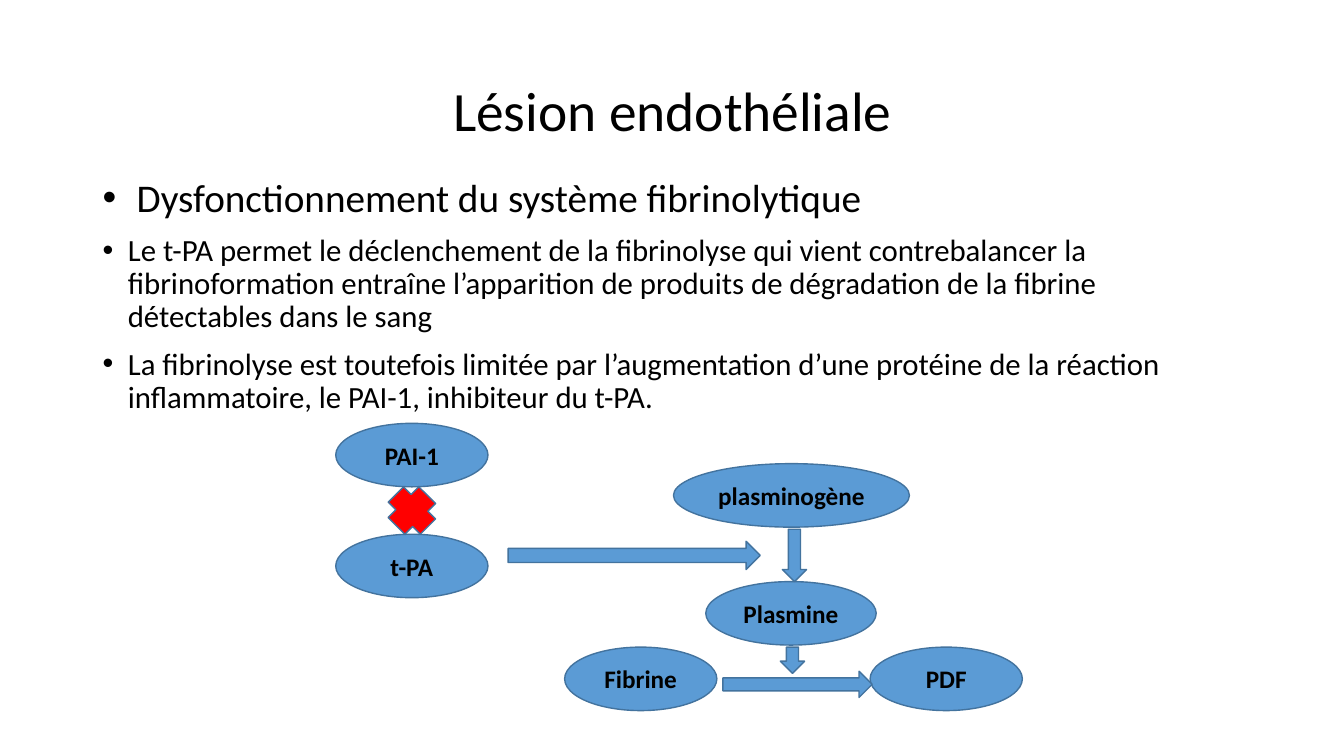
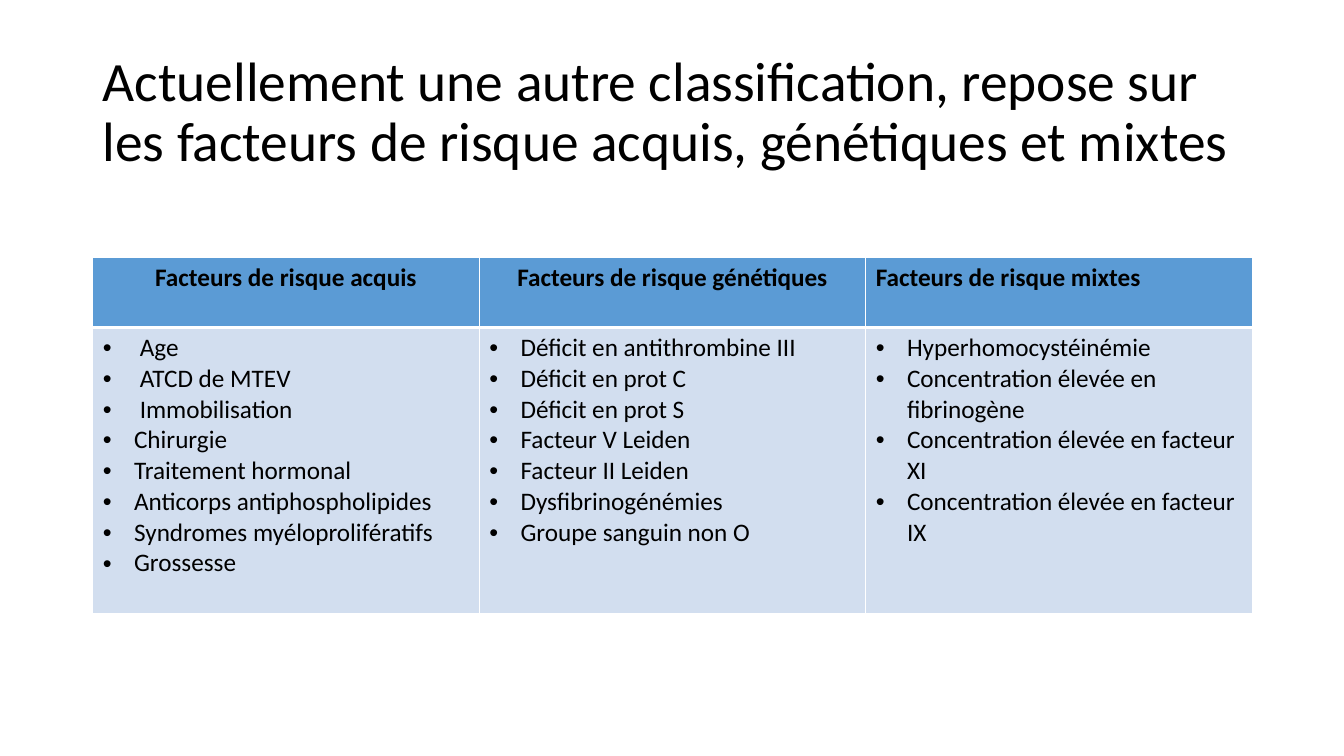
from dataclasses import dataclass

from lxml import etree
from pptx import Presentation
from pptx.dml.color import RGBColor
from pptx.enum.shapes import MSO_SHAPE
from pptx.enum.text import MSO_ANCHOR, PP_ALIGN
from pptx.oxml.ns import qn
from pptx.slide import Slide
from pptx.table import _Cell
from pptx.text.text import TextFrame, _Paragraph
from pptx.util import Inches, Pt

ELLIPSE = MSO_SHAPE.OVAL
CROSS = MSO_SHAPE.CROSS
DOWN_ARROW = MSO_SHAPE.DOWN_ARROW
RIGHT_ARROW = MSO_SHAPE.RIGHT_ARROW
LEFT, CENTER = PP_ALIGN.LEFT, PP_ALIGN.CENTER
TOP, MIDDLE = MSO_ANCHOR.TOP, MSO_ANCHOR.MIDDLE

FONT = "Calibri"
BLACK, WHITE, RED = "000000", "FFFFFF", "FF0000"
BLUE, DARK_BLUE, PALE_BLUE = "5B9BD5", "43739E", "D2DEEF"
MARGIN, CONTENT_WIDTH = 0.92, 11.5
NODE_WIDTH, NODE_HEIGHT = 1.51, 0.63


@dataclass(frozen=True)
class Node:
    text: str
    left: float
    top: float
    width: float = NODE_WIDTH


@dataclass(frozen=True)
class Symbol:
    kind: MSO_SHAPE
    left: float
    top: float
    width: float
    height: float
    fill: str = BLUE
    rotation: float = 0


@dataclass(frozen=True)
class Point:
    text: str
    size: float


@dataclass(frozen=True)
class RiskColumn:
    heading: str
    alignment: PP_ALIGN
    factors: tuple[str, ...]


POINTS = (
    Point(" Dysfonctionnement du système fibrinolytique", 28),
    Point("Le t-PA permet le déclenchement de la fibrinolyse qui vient contrebalancer la "
          "fibrinoformation entraîne l’apparition de produits de dégradation de la fibrine "
          "détectables dans le sang", 22),
    Point("La fibrinolyse est toutefois limitée par l’augmentation d’une protéine de la "
          "réaction inflammatoire, le PAI-1, inhibiteur du t-PA.", 22),
)

NODES = (
    Node("PAI-1", 3.33, 4.2),
    Node("t-PA", 3.33, 5.3),
    Node("plasminogène", 6.68, 4.6, 2.34),
    Node("Fibrine", 5.6, 6.42),
    Node("Plasmine", 7, 5.77, 1.69),
    Node("PDF", 8.63, 6.42),
)

SYMBOLS = (
    Symbol(CROSS, 3.86, 4.85, 0.45, 0.43, RED, 45),
    Symbol(DOWN_ARROW, 7.76, 5.25, 0.24, 0.52),
    Symbol(RIGHT_ARROW, 5.04, 5.37, 2.5, 0.28),
    Symbol(RIGHT_ARROW, 7.17, 6.66, 1.48, 0.26),
    Symbol(DOWN_ARROW, 7.74, 6.42, 0.24, 0.26),
)

RISK_COLUMNS = (
    RiskColumn("Facteurs de risque acquis", CENTER, (
        " Age", " ATCD de MTEV", " Immobilisation", "Chirurgie", "Traitement hormonal",
        "Anticorps antiphospholipides", "Syndromes myéloprolifératifs", "Grossesse")),
    RiskColumn("Facteurs de risque génétiques", CENTER, (
        "Déficit en antithrombine III", "Déficit en prot C", "Déficit en prot S",
        "Facteur V Leiden", "Facteur II Leiden", "Dysfibrinogénémies",
        "Groupe sanguin non O")),
    RiskColumn("Facteurs de risque mixtes", LEFT, (
        "Hyperhomocystéinémie", "Concentration élevée en fibrinogène",
        "Concentration élevée en facteur XI", "Concentration élevée en facteur IX")),
)


def color(value: str) -> RGBColor:
    return RGBColor.from_string(value)


def add_run(paragraph: _Paragraph, text: str, size: float, bold: bool = False) -> None:
    run = paragraph.add_run()
    run.text = text
    run.font.name = FONT
    run.font.size = Pt(size)
    run.font.bold = bold
    run.font.color.rgb = color(BLACK)


def set_bullet(paragraph: _Paragraph, indent: float) -> None:
    properties = paragraph._p.get_or_add_pPr()
    properties.set("marL", str(Inches(indent)))
    properties.set("indent", str(-Inches(indent)))
    etree.SubElement(properties, qn("a:buFont"), typeface="Arial")
    etree.SubElement(properties, qn("a:buChar"), char="•")


def add_bullets(frame: TextFrame, points: tuple[Point, ...], indent: float,
                line_spacing: float = 1.0, gap: float = 0) -> None:
    for index, point in enumerate(points):
        paragraph = frame.add_paragraph() if index else frame.paragraphs[0]
        paragraph.line_spacing = line_spacing
        if index and gap:
            paragraph.space_before = Pt(gap)
        set_bullet(paragraph, indent)
        add_run(paragraph, point.text, point.size)


def add_text_box(slide: Slide, top: float, height: float, anchor: MSO_ANCHOR) -> TextFrame:
    box = slide.shapes.add_textbox(
        Inches(MARGIN), Inches(top), Inches(CONTENT_WIDTH), Inches(height))
    frame = box.text_frame
    frame.word_wrap = True
    frame.vertical_anchor = anchor
    return frame


def add_title(slide: Slide, text: str, alignment: PP_ALIGN) -> None:
    paragraph = add_text_box(slide, 0.4, 1.45, MIDDLE).paragraphs[0]
    paragraph.alignment = alignment
    paragraph.line_spacing = 0.9
    add_run(paragraph, text, 39.6)


def add_symbol(slide: Slide, symbol: Symbol) -> TextFrame:
    shape = slide.shapes.add_shape(
        symbol.kind, Inches(symbol.left), Inches(symbol.top),
        Inches(symbol.width), Inches(symbol.height))
    shape.shadow.inherit = False
    shape.rotation = symbol.rotation
    shape.fill.solid()
    shape.fill.fore_color.rgb = color(symbol.fill)
    shape.line.color.rgb = color(DARK_BLUE)
    shape.line.width = Pt(1)
    return shape.text_frame


def add_node(slide: Slide, node: Node) -> None:
    frame = add_symbol(slide, Symbol(ELLIPSE, node.left, node.top, node.width, NODE_HEIGHT))
    frame.vertical_anchor = MIDDLE
    paragraph = frame.paragraphs[0]
    paragraph.alignment = CENTER
    add_run(paragraph, node.text, 18, bold=True)


def style_cell(cell: _Cell, fill: str, top_border: float, bottom_border: float) -> None:
    properties = cell._tc.get_or_add_tcPr()
    borders = {"a:lnL": 1, "a:lnR": 1, "a:lnT": top_border, "a:lnB": bottom_border}
    for tag, width in borders.items():
        line = etree.SubElement(properties, qn(tag), w=str(Pt(width)))
        solid = etree.SubElement(line, qn("a:solidFill"))
        etree.SubElement(solid, qn("a:srgbClr"), val=WHITE)
    cell.fill.solid()
    cell.fill.fore_color.rgb = color(fill)


def add_risk_table(slide: Slide) -> None:
    row_heights = (0.7, 2.84)
    table = slide.shapes.add_table(
        len(row_heights), len(RISK_COLUMNS), Inches(MARGIN), Inches(2.55),
        Inches(CONTENT_WIDTH), Inches(sum(row_heights))).table
    for row, height in zip(table.rows, row_heights):
        row.height = Inches(height)
    for index, column in enumerate(RISK_COLUMNS):
        table.columns[index].width = Inches(CONTENT_WIDTH / len(RISK_COLUMNS))
        header, body = table.cell(0, index), table.cell(1, index)
        style_cell(header, BLUE, 1, 3)
        style_cell(body, PALE_BLUE, 3, 1)
        heading = header.text_frame.paragraphs[0]
        heading.alignment = column.alignment
        add_run(heading, column.heading, 18, bold=True)
        add_bullets(body.text_frame, tuple(Point(text, 18) for text in column.factors), 0.31)


def build_lesion_slide(slide: Slide) -> None:
    add_title(slide, "Lésion endothéliale", CENTER)
    add_bullets(add_text_box(slide, 1.72, 2.45, TOP), POINTS, 0.25, 0.9, 10)
    for node in NODES:
        add_node(slide, node)
    for symbol in SYMBOLS:
        add_symbol(slide, symbol)


def build_risk_slide(slide: Slide) -> None:
    add_title(slide, "Actuellement une autre classification, repose sur les facteurs "
                     "de risque acquis, génétiques et mixtes", LEFT)
    add_risk_table(slide)


def main() -> None:
    presentation = Presentation()
    presentation.slide_width = Inches(13.33)
    presentation.slide_height = Inches(7.5)
    blank_layout = presentation.slide_layouts[6]
    for build in (build_lesion_slide, build_risk_slide):
        build(presentation.slides.add_slide(blank_layout))
    presentation.save("out.pptx")


if __name__ == "__main__":
    main()
